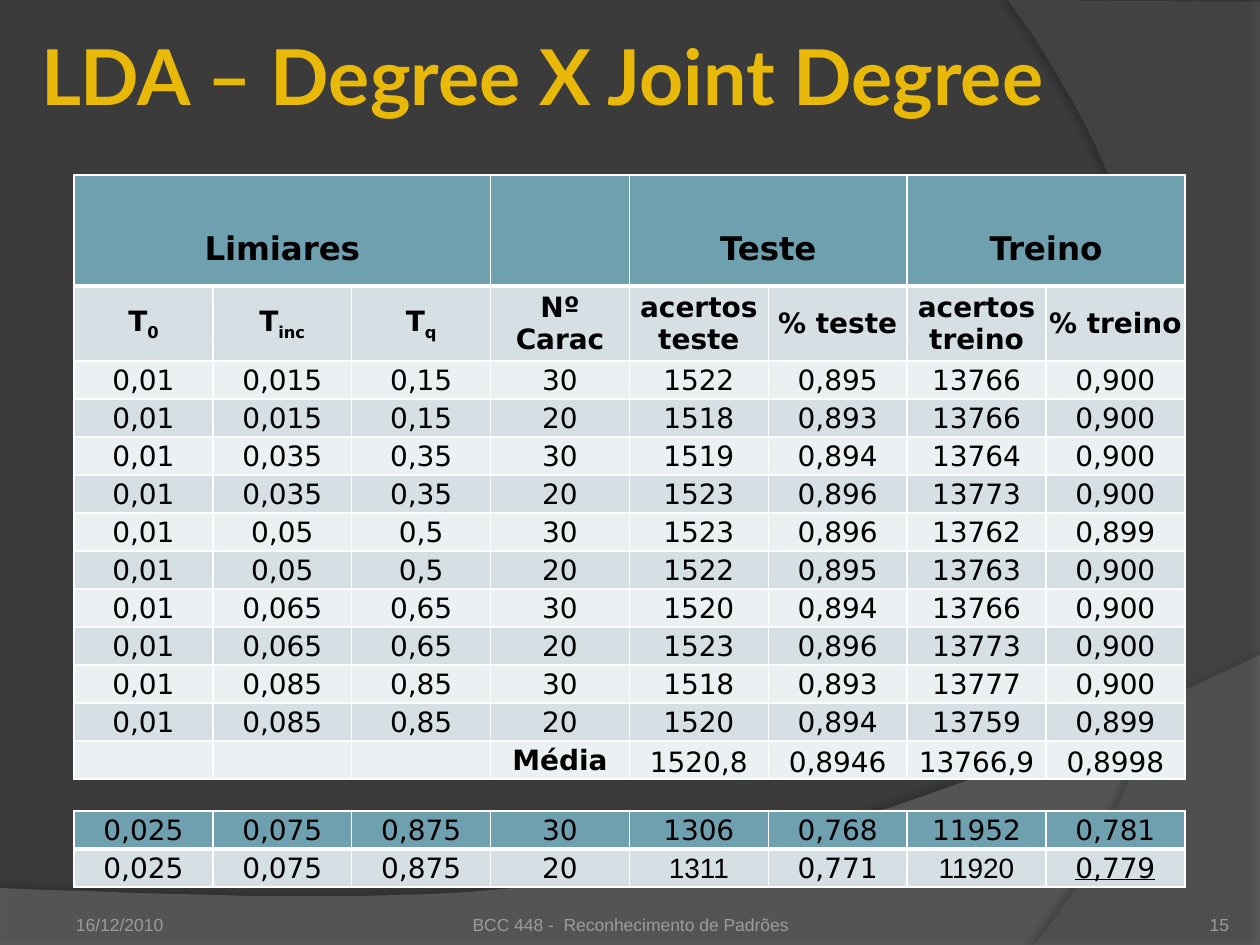
from dataclasses import dataclass

from lxml.etree import SubElement
from pptx import Presentation
from pptx.dml.color import RGBColor
from pptx.enum.text import MSO_ANCHOR, PP_ALIGN
from pptx.oxml.ns import qn
from pptx.util import Pt

SCALE = 914400 / 126  # EMU per px
SANS = "DejaVu Sans"
TEAL, DARK, LIGHT = "6EA0B0", "D5DFE4", "EBF0F2"
LEFT, MID, RIGHT = PP_ALIGN.LEFT, PP_ALIGN.CENTER, PP_ALIGN.RIGHT

HEAD = ["_Limiares", "", "", "", "_Teste", "", "_Treino", ""]
NAMES = ["T_0", "T_inc", "T_q", "Nº Carac", "acertos teste", "% teste",
         "acertos treino", "% treino"]
RUNS = """0,01 0,015 0,15 30 1522 0,895 13766 0,900
0,01 0,015 0,15 20 1518 0,893 13766 0,900
0,01 0,035 0,35 30 1519 0,894 13764 0,900
0,01 0,035 0,35 20 1523 0,896 13773 0,900
0,01 0,05 0,5 30 1523 0,896 13762 0,899
0,01 0,05 0,5 20 1522 0,895 13763 0,900
0,01 0,065 0,65 30 1520 0,894 13766 0,900
0,01 0,065 0,65 20 1523 0,896 13773 0,900
0,01 0,085 0,85 30 1518 0,893 13777 0,900
0,01 0,085 0,85 20 1520 0,894 13759 0,899"""
MEAN = ["", "", "", "Média", "1520,8", "0,8946", "13766,9", "0,8998"]
LAST = """0,025 0,075 0,875 30 1306 0,768 11952 0,781
0,025 0,075 0,875 20 1311 0,771 11920 0,779"""


@dataclass
class Wave:
    start: tuple
    steps: list  # a point, or a triple of Bezier points
    color: str
    alpha: int
    shade: int
    dist: float
    angle: int


@dataclass
class Note:
    text: str
    box: tuple
    pad: int
    align: PP_ALIGN


WAVES = [
    Wave((0, 888), [(0, 946), (1260, 946), (1260, 655),
                    ((704, 919), (493, 906), (0, 888))],
         "7F7F7F", 45, 35, 3.5, 270),
    Wave((1260, 2), [(1260, 945), (1034, 945),
                     ((1178, 780), (1283, 378), (1008, 0))],
         "5E5E5E", 40, 45, 4, 180),
]
NOTES = [
    Note("16/12/2010", (63, 885, 294, 50), 13, LEFT),
    Note("BCC 448 -  Reconhecimento de Padrões", (431, 885, 399, 50), 0, MID),
    Note("15", (1124, 885, 105, 50), 0, RIGHT),
]


def px(n: float) -> int:
    return round(n * SCALE)


def rgb(code: str) -> RGBColor:
    return RGBColor.from_string(code)


def write(frame, text: str, *, size=16, font=SANS, color="000000", bold=False,
          line=False, align=MID) -> None:
    """Write one paragraph; what follows an underscore is subscript."""
    para = frame.paragraphs[0]
    para.alignment = align
    for i, part in enumerate(text.split("_")):
        if not part:
            continue
        run = para.add_run()
        run.text = part
        face = run.font
        face.size, face.name, face.bold = Pt(size), font, bold
        face.color.rgb = rgb(color)
        if line:
            face.underline = True
        if i:
            run._r.get_or_add_rPr().set("baseline", "-25000")
    if not text:
        para._p.get_or_add_endParaRPr().set("sz", str(size * 100))


def inset(frame, left: int, top: int, right: int, bottom: int) -> None:
    frame.margin_left, frame.margin_top = px(left), px(top)
    frame.margin_right, frame.margin_bottom = px(right), px(bottom)


def curve(a: tuple, b: tuple, c: tuple, d: tuple, count=32) -> list:
    """Points along a cubic Bezier curve."""
    out = []
    for i in range(1, count + 1):
        t = i / count
        u = 1 - t
        out.append(tuple(u**3 * p + 3 * u * u * t * q + 3 * u * t * t * r + t**3 * s
                         for p, q, r, s in zip(a, b, c, d)))
    return out


def draw(slide, wave: Wave) -> None:
    points = [wave.start]
    for step in wave.steps:
        bent = isinstance(step[0], tuple)
        points += curve(points[-1], *step) if bent else [step]
    pen = slide.shapes.build_freeform(*wave.start, scale=SCALE)
    pen.add_line_segments(points[1:], close=True)
    shape = pen.convert_to_shape()
    shape.fill.solid()
    shape.fill.fore_color.rgb = rgb(wave.color)
    shape.line.fill.background()
    shape.shadow.inherit = False
    # Transparency and soft shadow
    props = shape._element.spPr
    tint = props.find(qn("a:solidFill"))[0]
    SubElement(tint, qn("a:alpha"), val=str(wave.alpha * 1000))
    cast = SubElement(props.find(qn("a:effectLst")), qn("a:outerShdw"),
                      blurRad=str(Pt(4)), dist=str(Pt(wave.dist)),
                      dir=str(wave.angle * 60000), algn="ctr", rotWithShape="0")
    black = SubElement(cast, qn("a:srgbClr"), val="000000")
    SubElement(black, qn("a:alpha"), val=str(wave.shade * 1000))


def edge(cell, base: int) -> None:
    """White cell borders, with the given width below."""
    props = cell._tc.get_or_add_tcPr()
    for i, (side, width) in enumerate(dict(L=1, R=1, T=1, B=base).items()):
        rule = SubElement(props, qn(f"a:ln{side}"), w=str(Pt(width)))
        fill = SubElement(rule, qn("a:solidFill"))
        SubElement(fill, qn("a:srgbClr"), val="FFFFFF")
        props.insert(i, rule)


def grid(slide, top: int, rows: list, highs: list):
    """A table whose first row is teal and whose others alternate."""
    table = slide.shapes.add_table(len(rows), 8, px(74), px(top), px(1111),
                                   px(sum(highs))).table
    table.first_row = table.horz_banding = False
    for col in table.columns:
        col.width = px(1111 / 8)
    for r, (row, high) in enumerate(zip(rows, highs)):
        table.rows[r].height = px(high)
        for c in range(len(row)):
            cell = table.cell(r, c)
            cell.fill.solid()
            cell.fill.fore_color.rgb = rgb((DARK if r % 2 else LIGHT) if r else TEAL)
            cell.vertical_anchor = MSO_ANCHOR.MIDDLE
            inset(cell, 1, 1, 1, 0)
            edge(cell, 1 if r else 3)
    return table


def main() -> None:
    deck = Presentation()
    deck.slide_width, deck.slide_height = px(1260), px(945)
    slide = deck.slides.add_slide(deck.slide_layouts[5])
    slide.background.fill.solid()
    slide.background.fill.fore_color.rgb = rgb("3B3B3B")

    # Backdrop, behind the title
    for wave in WAVES:
        draw(slide, wave)
    title = slide.shapes.title
    slide.shapes._spTree.append(title._element)
    title.left, title.top, title.width, title.height = map(px, (35, -4, 1191, 158))
    frame = title.text_frame
    frame.vertical_anchor = MSO_ANCHOR.MIDDLE
    inset(frame, 6, 6, 6, 6)
    write(frame, "LDA – Degree X Joint Degree", size=44, font="Lato",
          color="E9B90A", bold=True, align=LEFT)

    # Footer
    for note in NOTES:
        frame = slide.shapes.add_textbox(*map(px, note.box)).text_frame
        frame.word_wrap = True
        frame.vertical_anchor = MSO_ANCHOR.BOTTOM
        inset(frame, note.pad, 6, note.pad, 0)
        write(frame, note.text, size=10, font="Arial", color="9D9B9A",
              align=note.align)

    # Main table
    rows = [HEAD, NAMES, *[line.split() for line in RUNS.splitlines()], MEAN]
    table = grid(slide, 175, rows, [111, 75] + [38] * 11)
    for first, last in ((0, 2), (4, 5), (6, 7)):
        table.cell(0, first).merge(table.cell(0, last))
    for r, row in enumerate(rows):
        for c, text in enumerate(row):
            cell = table.cell(r, c)
            if row is MEAN and c > 3:
                cell.vertical_anchor = MSO_ANCHOR.BOTTOM
            write(cell.text_frame, text, size=16 if r else 32,
                  bold=r < 2 or text == "Média")

    # Lower table
    rows = [line.split() for line in LAST.splitlines()]
    table = grid(slide, 811, rows, [38, 38])
    for r, row in enumerate(rows):
        for c, text in enumerate(row):
            write(table.cell(r, c).text_frame, text, line=text == "0,779",
                  font="Arial" if text in ("1311", "11920") else SANS)

    deck.save("out.pptx")


if __name__ == "__main__":
    main()
